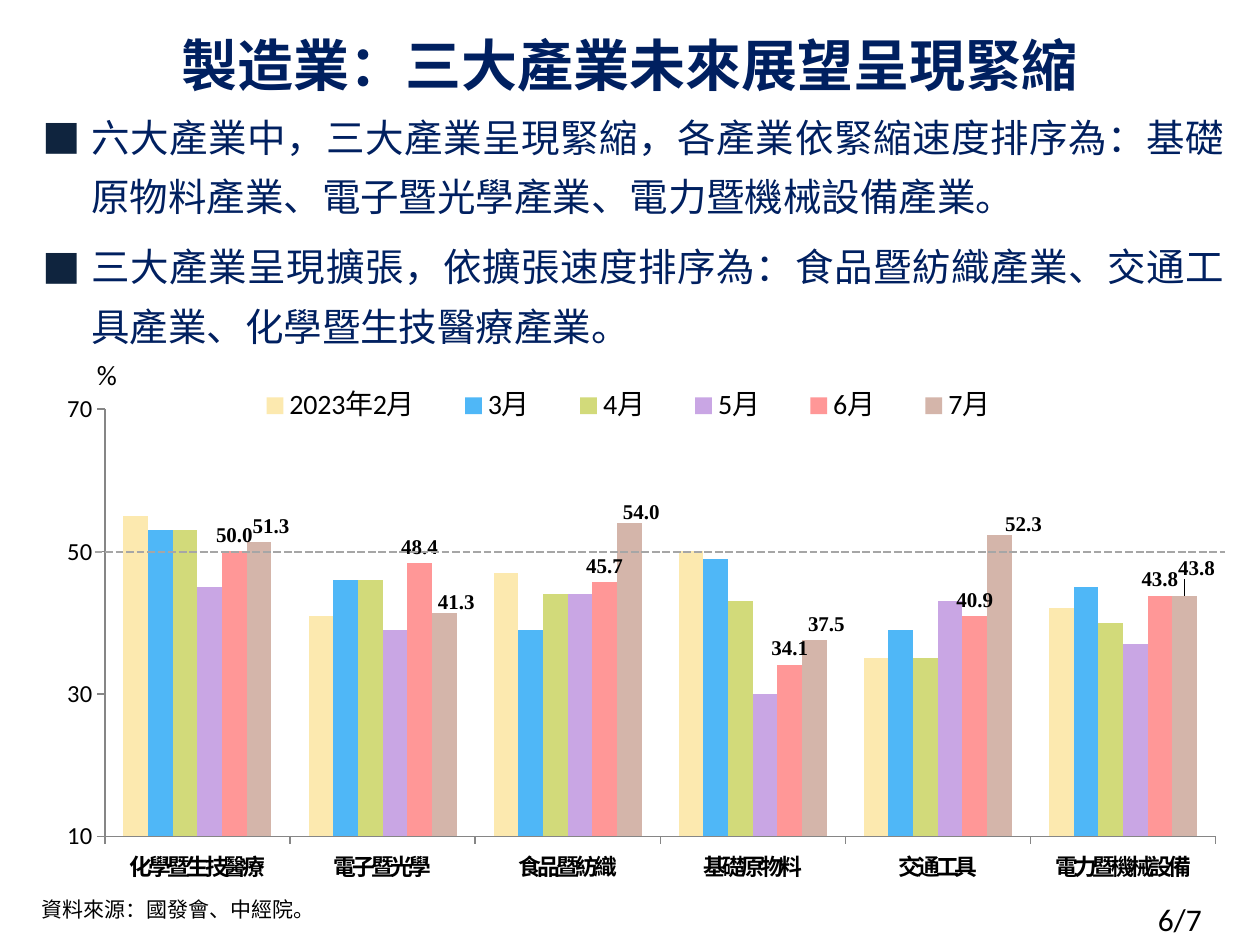
from lxml import etree
from pptx import Presentation
from pptx import util as u
from pptx.chart.data import CategoryChartData
from pptx.dml.color import RGBColor
from pptx.enum import chart as charts, dml, shapes, text
from pptx.oxml import parse_xml
from pptx.oxml.ns import nsdecls, qn

CATEGORIES = ["化學暨生技醫療", "電子暨光學", "食品暨紡織", "基礎原物料", "交通工具", "電力暨機械設備"]
SERIES = [
    ("2023年2月", "FCE9AF", [55, 41, 47, 50, 35, 42]),
    ("3月", "4FB7F7", [53, 46, 39, 49, 39, 45]),
    ("4月", "D2DA7A", [53, 46, 44, 43, 35, 40]),
    ("5月", "C9A6E4", [45, 39, 44, 30, 43, 37]),
    ("6月", "FF9797", [50, 48.4, 45.7, 34.1, 40.9, 43.8]),
    ("7月", "D4B5AA", [51.3, 41.3, 54, 37.5, 52.3, 43.8]),
]
# Shifts of the July labels, as fractions of the chart
JULY_SHIFTS = [(0.01, 0), (0.01, 0.01), (0.01, 0.01), (0.01, 0), (0.02, 0.01), (0.01, -0.02)]


def color(value):
    return RGBColor.from_string(value)


def layout(x, y, w=None, h=None, inner=False):
    """Manual chart layout; without a size it is an offset."""
    parts = '<c:layoutTarget val="inner"/>' if inner else ""
    if w is not None:
        parts += '<c:xMode val="edge"/><c:yMode val="edge"/>'
    for tag, value in zip("xywh", (x, y, w, h)):
        if value is not None:
            parts += f'<c:{tag} val="{value}"/>'
    return parse_xml(f'<c:layout {nsdecls("c")}><c:manualLayout>{parts}</c:manualLayout></c:layout>')


def place(element, new_layout, after):
    """Put a layout into a chart element, right after the named child."""
    for old in element.findall(qn("c:layout")):
        element.remove(old)
    anchor = element.find(qn(after))
    if anchor is None:
        element.insert(0, new_layout)
    else:
        anchor.addnext(new_layout)


class SlideBuilder:
    CJK = "Noto Sans CJK SC"
    LATIN = "Calibri"
    NUMBERS = "Times New Roman"
    NAVY, BLACK, AXIS = "002060", "000000", "868686"

    def __init__(self, slide):
        self.slide = slide

    def style(self, font, size, name, value=BLACK, bold=False):
        font.size, font.name, font.bold = u.Pt(size), name, bold
        font.color.rgb = color(value)
        latin = font._element.find(qn("a:latin")) if hasattr(font, "_element") else font._rPr.find(qn("a:latin"))
        east_asian = etree.Element(qn("a:ea"), typeface=name)
        latin.addnext(east_asian)

    def fill_text(self, shape, lines, size, name, value=BLACK, bold=False, align=text.PP_ALIGN.LEFT,
                  spacing=None, before=0, indent=None, bullet=None):
        frame = shape.text_frame
        frame.word_wrap = True
        frame.text = "\n".join(lines)
        for paragraph in frame.paragraphs:
            properties = paragraph._p.get_or_add_pPr()
            if indent:
                properties.set("marL", str(u.Inches(indent[0])))
                properties.set("indent", str(u.Inches(indent[1])))
            if bullet:
                mark = etree.SubElement(properties, qn("a:buClr"))
                etree.SubElement(mark, qn("a:srgbClr"), val=bullet[1])
                etree.SubElement(properties, qn("a:buFont"), typeface=name)
                etree.SubElement(properties, qn("a:buChar"), char=bullet[0])
            paragraph.alignment = align
            paragraph.space_before = u.Pt(before)
            if spacing:
                paragraph.line_spacing = u.Pt(spacing)
            self.style(paragraph.font, size, name, value, bold)
        return frame

    def text_box(self, box, lines, size, name, **options):
        shape = self.slide.shapes.add_textbox(*map(u.Inches, box))
        return self.fill_text(shape, lines, size, name, **options)

    def panel(self, box, lines, size, **options):
        shape = self.slide.shapes.add_shape(shapes.MSO_SHAPE.ROUNDED_RECTANGLE, *map(u.Inches, box))
        shape.shadow.inherit = False
        shape.fill.background()
        shape.line.fill.background()
        frame = self.fill_text(shape, lines, size, self.CJK, value=self.NAVY, **options)
        frame.margin_top = frame.margin_bottom = 0
        frame.vertical_anchor = text.MSO_ANCHOR.MIDDLE

    def dashed_line(self, x1, x2, y, value, width):
        line = self.slide.shapes.add_connector(
            shapes.MSO_CONNECTOR.STRAIGHT, u.Inches(x1), u.Inches(y), u.Inches(x2), u.Inches(y))
        line.line.color.rgb = color(value)
        line.line.width = u.Pt(width)
        line.line.dash_style = dml.MSO_LINE.SQUARE_DOT
        etree.SubElement(line._element.spPr, qn("a:effectLst"))

    def column_chart(self, box):
        data = CategoryChartData()
        data.categories = CATEGORIES
        for name, _, values in SERIES:
            data.add_series(name, values, number_format="0.0")
        chart = self.slide.shapes.add_chart(
            charts.XL_CHART_TYPE.COLUMN_CLUSTERED, *map(u.Inches, box), data).chart
        chart.has_title = False
        self.style(chart.font, 18, self.LATIN)
        plot = chart.plots[0]
        plot.gap_width, plot.overlap, plot.vary_by_categories = 150, 0, False
        for series, (_, value, _) in zip(plot.series, SERIES):
            series.format.fill.solid()
            series.format.fill.fore_color.rgb = color(value)
        self.data_labels(plot.series[4])
        self.data_labels(plot.series[5], JULY_SHIFTS)

        # Axes
        for axis, size, name, bold in ((chart.category_axis, 13, self.CJK, True),
                                       (chart.value_axis, 14, self.LATIN, False)):
            axis.has_major_gridlines = False
            axis.major_tick_mark = charts.XL_TICK_MARK.OUTSIDE
            axis.format.line.color.rgb = color(self.AXIS)
            self.style(axis.tick_labels.font, size, name, bold=bold)
        for run in chart.category_axis._element.iter(qn("a:defRPr")):
            run.set("spc", "-200")
        axis = chart.value_axis
        axis.minimum_scale, axis.maximum_scale, axis.major_unit = 10, 70, 20
        axis.tick_labels.number_format = "0"
        axis.tick_labels.number_format_is_linked = False

        # Legend and plot area
        chart.has_legend = True
        chart.legend.position = charts.XL_LEGEND_POSITION.TOP
        chart.legend.include_in_layout = False
        self.style(chart.legend.font, 16, self.LATIN)
        place(chart.legend._element, layout(0.16, 0.06, 0.67, 0.08), "c:legendPos")
        place(chart._chartSpace.chart.plotArea, layout(0.06, 0.106, 0.923, 0.787, inner=True), "c:none")

    def data_labels(self, series, shifts=()):
        labels = series.data_labels
        labels.show_value = True
        labels.number_format = "0.0"
        labels.number_format_is_linked = False
        labels.position = charts.XL_LABEL_POSITION.OUTSIDE_END
        self.style(labels.font, 12, self.NUMBERS, bold=True)
        for index, shift in enumerate(shifts):
            label = series.points[index].data_label
            self.style(label.font, 12, self.NUMBERS, bold=True)
            label.position = charts.XL_LABEL_POSITION.OUTSIDE_END
        for element, shift in zip(series._element.findall(".//" + qn("c:dLbl")), shifts):
            place(element, layout(*shift), "c:idx")


def main():
    presentation = Presentation()
    presentation.slide_width, presentation.slide_height = u.Inches(10), u.Inches(7.5)
    builder = SlideBuilder(presentation.slides.add_slide(presentation.slide_layouts[6]))

    # Chart with the line between growth and contraction
    builder.column_chart((0.26, 2.79, 9.55, 4.31))
    builder.dashed_line(0.75, 9.72, 4.38, "A6A6A6", 1.5)
    builder.text_box((0.67, 2.79, 0.63, 0.37), ["%"], 16, builder.LATIN)

    # Title and findings
    builder.panel((0, 0, 10, 1), ["製造業：三大產業未來展望呈現緊縮"], 32,
                  bold=True, align=text.PP_ALIGN.CENTER, spacing=40)
    builder.panel((0.04, 0.78, 9.88, 2.01), [
        "六大產業中，三大產業呈現緊縮，各產業依緊縮速度排序為：基礎原物料產業、電子暨光學產業、電力暨機械設備產業。",
        "三大產業呈現擴張，依擴張速度排序為：食品暨紡織產業、交通工具產業、化學暨生技醫療產業。",
    ], 22, align=text.PP_ALIGN.JUSTIFY, spacing=34, before=6, indent=(0.49, -0.39), bullet=("■", "0F243E"))

    # Footer
    builder.text_box((0.23, 7.1, 9.79, 0.27), ["資料來源：國發會、中經院。"], 12, "Noto Sans CJK JP",
                     spacing=12, before=2, indent=(0.3, -0.3))
    builder.text_box((9.09, 7.09, 0.91, 0.4), ["6/7"], 18, builder.LATIN)
    presentation.save("out.pptx")


if __name__ == "__main__":
    main()
